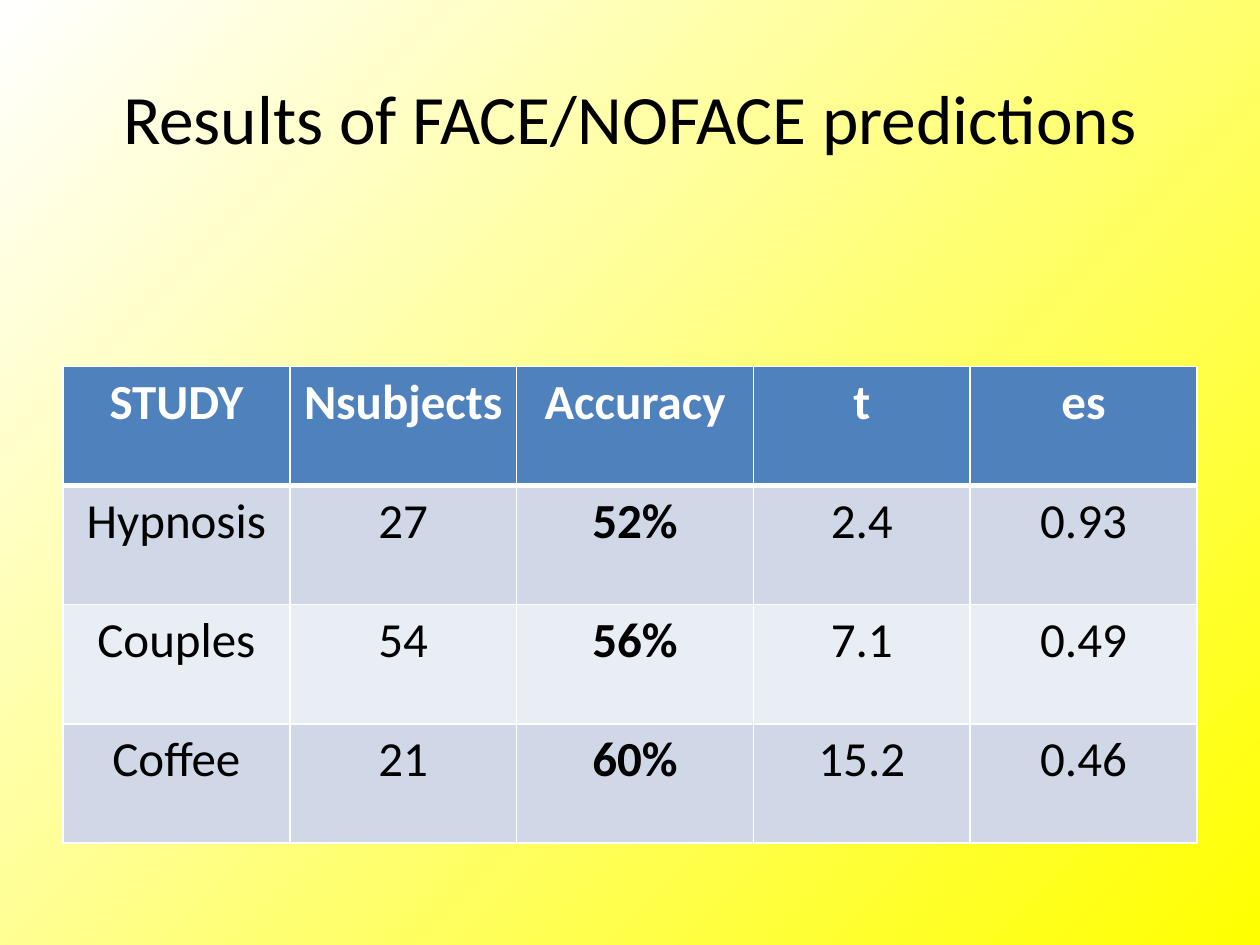
from lxml import etree
from pptx import Presentation
from pptx.dml.color import RGBColor
from pptx.enum.text import MSO_ANCHOR, PP_ALIGN
from pptx.oxml.ns import qn
from pptx.util import Inches, Pt

CENTER = PP_ALIGN.CENTER
MIDDLE = MSO_ANCHOR.MIDDLE

TITLE = "Results of FACE/NOFACE predictions"
ROWS = [
    ("STUDY", "Nsubjects", "Accuracy", "t", "es"),
    ("Hypnosis", "27", "52%", "2.4", "0.93"),
    ("Couples", "54", "56%", "7.1", "0.49"),
    ("Coffee", "21", "60%", "15.2", "0.46"),
]
COLUMN_WIDTHS = [1.8, 1.8, 1.88, 1.72, 1.8]
BOLD_COLUMN = ROWS[0].index("Accuracy")
LEFT, WIDTH = 0.5, 9
TABLE_TOP, TABLE_HEIGHT = 2.91, 3.78

FONT = "Calibri"
COLORS = {
    "yellow": "FFFF00",
    "white": "FFFFFF",
    "black": "000000",
    "header": "4F81BD",
    "odd_row": "D0D8E8",
    "even_row": "E9EDF4",
}


def color(name):
    return RGBColor.from_string(COLORS[name])


def style_paragraph(paragraph, size, color_name, bold=False):
    paragraph.alignment = CENTER
    paragraph.font.name = FONT
    paragraph.font.size = Pt(size)
    paragraph.font.bold = bold
    paragraph.font.color.rgb = color(color_name)


def paint_background(slide):
    """Radial gradient: yellow at the bottom right corner, white far from it."""
    fill = slide.background.fill
    fill.gradient()
    for stop, name in zip(fill.gradient_stops, ("yellow", "white")):
        stop.color.rgb = color(name)
    gradient = slide.element.find(".//" + qn("a:gradFill"))
    linear = gradient.find(qn("a:lin"))
    radial = etree.Element(qn("a:path"), path="circle")
    etree.SubElement(radial, qn("a:fillToRect"), l="100000", t="100000")
    gradient.replace(linear, radial)


def add_title(slide):
    box = slide.shapes.add_textbox(Inches(LEFT), Inches(0.3), Inches(WIDTH), Inches(1.25))
    frame = box.text_frame
    frame.word_wrap = True
    frame.vertical_anchor = MIDDLE
    paragraph = frame.paragraphs[0]
    paragraph.text = TITLE
    style_paragraph(paragraph, 39.6, "black")


def set_borders(cell, widths):
    """Draw white borders; widths are points by side tag."""
    properties = cell._tc.get_or_add_tcPr()
    for index, (side, width) in enumerate(widths.items()):
        line = etree.Element(qn("a:" + side), w=str(Pt(width)))
        fill = etree.SubElement(line, qn("a:solidFill"))
        etree.SubElement(fill, qn("a:srgbClr"), val=COLORS["white"])
        properties.insert(index, line)


def add_results_table(slide):
    table = slide.shapes.add_table(
        len(ROWS), len(COLUMN_WIDTHS),
        Inches(LEFT), Inches(TABLE_TOP), Inches(WIDTH), Inches(TABLE_HEIGHT),
    ).table
    for column, width in zip(table.columns, COLUMN_WIDTHS):
        column.width = Inches(width)
    for row_index, row in enumerate(ROWS):
        is_header = row_index == 0
        fill_name = "header" if is_header else "odd_row" if row_index % 2 else "even_row"
        borders = {
            "lnL": 1,
            "lnR": 1,
            "lnT": 3 if row_index == 1 else 1,
            "lnB": 3 if is_header else 1,
        }
        for column_index, text in enumerate(row):
            cell = table.cell(row_index, column_index)
            cell.text = text
            cell.fill.solid()
            cell.fill.fore_color.rgb = color(fill_name)
            set_borders(cell, borders)
            style_paragraph(
                cell.text_frame.paragraphs[0], 28,
                "white" if is_header else "black",
                is_header or column_index == BOLD_COLUMN,
            )


def main():
    presentation = Presentation()
    presentation.slide_width = Inches(10)
    presentation.slide_height = Inches(7.5)
    slide = presentation.slides.add_slide(presentation.slide_layouts[6])
    paint_background(slide)
    add_title(slide)
    add_results_table(slide)
    presentation.save("out.pptx")


if __name__ == "__main__":
    main()
